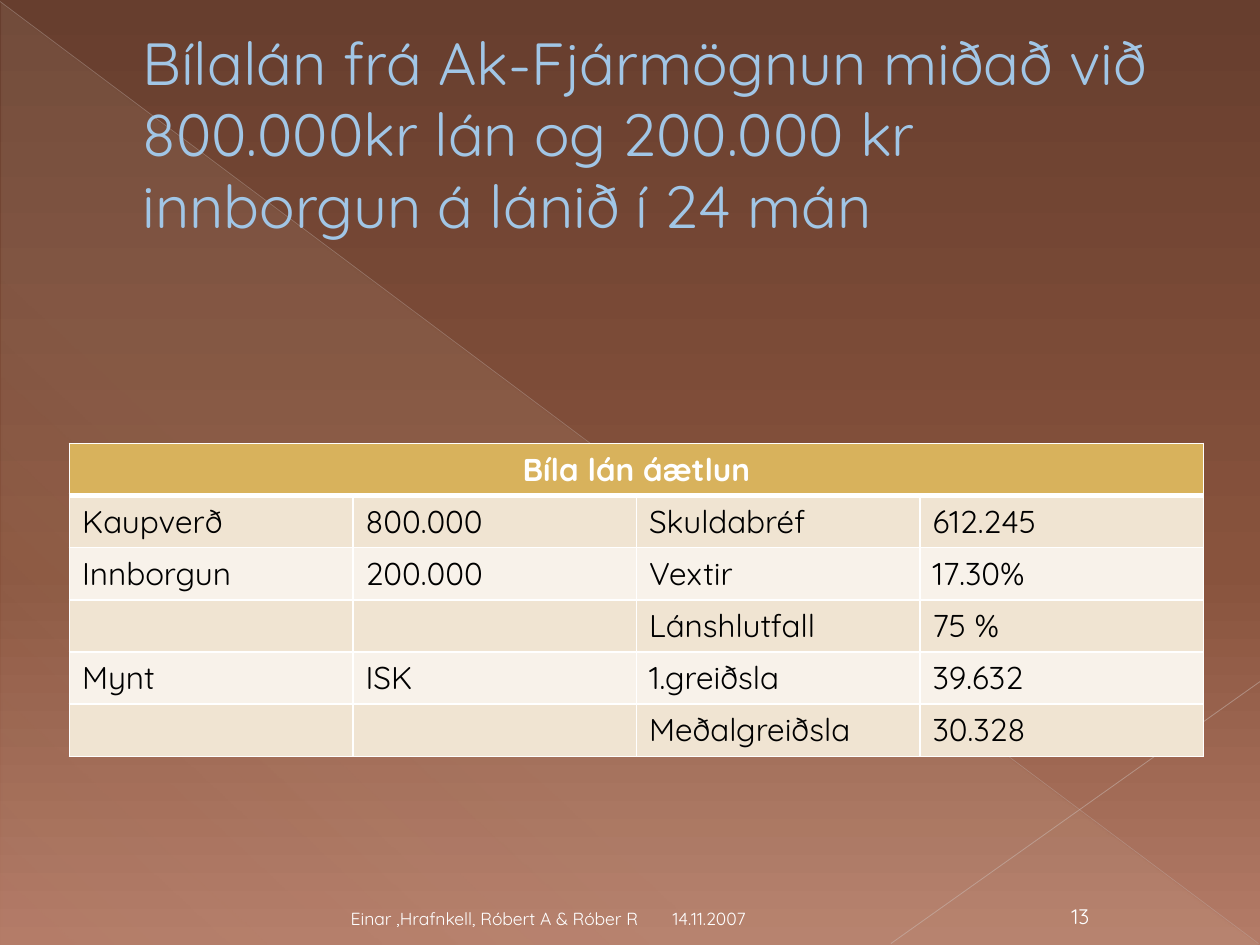
import lxml.etree
import pptx
import pptx.dml.color
import pptx.enum.shapes
import pptx.enum.text
import pptx.oxml
import pptx.oxml.ns
import pptx.util

Cm, Pt = pptx.util.Cm, pptx.util.Pt
qn = pptx.oxml.ns.qn
RGB = pptx.dml.color.RGBColor.from_string
ALIGN = pptx.enum.text.PP_ALIGN
ANCHOR = pptx.enum.text.MSO_ANCHOR

TITLE = "Bílalán frá Ak-Fjármögnun miðað við 800.000kr lán og 200.000 kr innborgun á lánið í 24 mán"
TABLE_HEAD = "Bíla lán áætlun"
ROWS = [
    ("Kaupverð", "800.000", "Skuldabréf", "612.245"),
    ("Innborgun", "200.000", "Vextir", "17.30%"),
    ("", "", "Lánshlutfall", "75 %"),
    ("Mynt", "ISK", "1.greiðsla", "39.632"),
    ("", "", "Meðalgreiðsla", "30.328"),
]
FOOTER = [
    ("Einar ,Hrafnkell, Róbert A & Róber R", 1.27, 11.84, "small", ALIGN.RIGHT),
    ("14.11.2007", 13.31, 5.92, "small", ALIGN.LEFT),
    ("13", 21.08, 1.4, "number", ALIGN.CENTER),
]
RAYS = [
    ((0, 0.03), (25.37, 19.02), "C8BCB8", 0.39, 35),
    ((25.4, 13.74), (17.96, 19.02), "CEC3BF", 0.47, 45),
]
THEME = {
    "font": "Quicksand",
    "size": {"title": 34, "table": 18, "number": 12, "small": 10},
    "title": "A1C6E6",
    "title_edge": "677E91",
    "light": "FFFFFF",
    "dark": "000000",
    "head": "D8B25C",
    "bands": ("F0E4D2", "F8F2EA"),
    "backdrop": [(0, "673E2E", 100), (60, "88533D", 100), (100, "B37B67", 100)],
    "wedge": [(0, "EBDDC3", 10), (70, "EBDDC3", 8), (100, "EBDDC3", 1)],
}


def add(parent, tag, **attrs):
    return lxml.etree.SubElement(parent, qn(tag), {k: str(v) for k, v in attrs.items()})


def add_color(parent, color, alpha=100):
    clr = add(parent, "a:srgbClr", val=color)
    if alpha < 100:
        add(clr, "a:alpha", val=alpha * 1000)


def set_gradient(fill, element, stops, angle):
    fill.gradient()
    grad = element.find(".//" + qn("a:gradFill"))
    for child in list(grad):
        grad.remove(child)
    gs_list = add(grad, "a:gsLst")
    for pos, color, alpha in stops:
        add_color(add(gs_list, "a:gs", pos=pos * 1000), color, alpha)
    add(grad, "a:lin", ang=angle * 60000, scaled=0)


def write(tf, text, size="table", color="light", bold=False, align=ALIGN.LEFT, anchor=ANCHOR.TOP):
    tf.vertical_anchor = anchor
    p = tf.paragraphs[0]
    p.alignment = align
    r = p.add_run()
    r.text = text
    r.font.name = THEME["font"]
    r.font.size = Pt(THEME["size"][size])
    r.font.bold = bold
    r.font.color.rgb = RGB(THEME[color])
    return p, r


def add_backdrop(s):
    set_gradient(s.background.fill, s.background._cSld, THEME["backdrop"], 90)
    sp = s.shapes.add_shape(pptx.enum.shapes.MSO_SHAPE.RIGHT_TRIANGLE,
                            Cm(0.03), Cm(0.05), Cm(25.35), Cm(19))
    sp.shadow.inherit = False
    sp.line.fill.background()
    set_gradient(sp.fill, sp.element.spPr, THEME["wedge"], 133)
    for start, end, color, width, alpha in RAYS:
        ray = s.shapes.add_connector(pptx.enum.shapes.MSO_CONNECTOR.STRAIGHT,
                                     *(Cm(v) for v in start + end))
        ray.line.width = Pt(width)
        ray.line.color.rgb = RGB(color)
        clr = ray.element.spPr.find(".//" + qn("a:srgbClr"))
        add(clr, "a:alpha", val=alpha * 1000)
        add(ray.element.spPr, "a:effectLst")


def add_title(s):
    sp = s.shapes.title
    sp.element.getparent().append(sp.element)
    sp.left, sp.top, sp.width, sp.height = Cm(1.27), Cm(0.74), Cm(22.86), Cm(3.89)
    sp.text_frame.word_wrap = True
    sp.text_frame.auto_size = pptx.enum.text.MSO_AUTO_SIZE.NONE
    p, r = write(sp.text_frame, TITLE, size="title", color="title", anchor=ANCHOR.MIDDLE)
    pPr = p._p.get_or_add_pPr()
    pPr.set("marL", str(Cm(1.35)))
    pPr.set("indent", "0")
    edge = pptx.oxml.parse_xml(
        '<a:ln xmlns:a="http://schemas.openxmlformats.org/drawingml/2006/main" w="6350"/>')
    add_color(add(edge, "a:solidFill"), THEME["title_edge"])
    r.font._element.insert(0, edge)


def set_borders(cell, **widths):
    tcPr = cell._tc.get_or_add_tcPr()
    for i, side in enumerate("LRTB"):
        ln = add(tcPr, "a:ln" + side, w=Pt(widths.get(side, 1)))
        add_color(add(ln, "a:solidFill"), THEME["light"])
        tcPr.insert(i, ln)


def add_loan_table(s):
    count, cols = len(ROWS) + 1, len(ROWS[0])
    table = s.shapes.add_table(count, cols, Cm(1.4), Cm(8.94),
                               Cm(22.86), Cm(1.03 * count)).table
    table.first_row = table.horz_banding = False
    for i, row in enumerate([(TABLE_HEAD,) + ("",) * (cols - 1)] + ROWS):
        for j, text in enumerate(row):
            cell = table.cell(i, j)
            cell.fill.solid()
            cell.fill.fore_color.rgb = RGB(THEME["bands"][(i - 1) % 2] if i else THEME["head"])
            set_borders(cell, T=3 if i == 1 else 1, B=1 if i else 3)
            if text:
                write(cell.text_frame, text, color="dark" if i else "light", bold=i == 0,
                      align=ALIGN.LEFT if i else ALIGN.CENTER)
    table.cell(0, 0).merge(table.cell(0, cols - 1))


def add_footer(s):
    for text, left, width, size, align in FOOTER:
        tf = s.shapes.add_textbox(Cm(left), Cm(18.01), Cm(width), Cm(0.84)).text_frame
        tf.word_wrap = True
        write(tf, text, size=size, align=align, anchor=ANCHOR.BOTTOM)


def main():
    prs = pptx.Presentation()
    prs.slide_width, prs.slide_height = Cm(25.4), Cm(19.05)
    s = prs.slides.add_slide(prs.slide_layouts.get_by_name("Title Only"))
    add_backdrop(s)
    add_title(s)
    add_loan_table(s)
    add_footer(s)
    prs.save("out.pptx")


if __name__ == "__main__":
    main()
